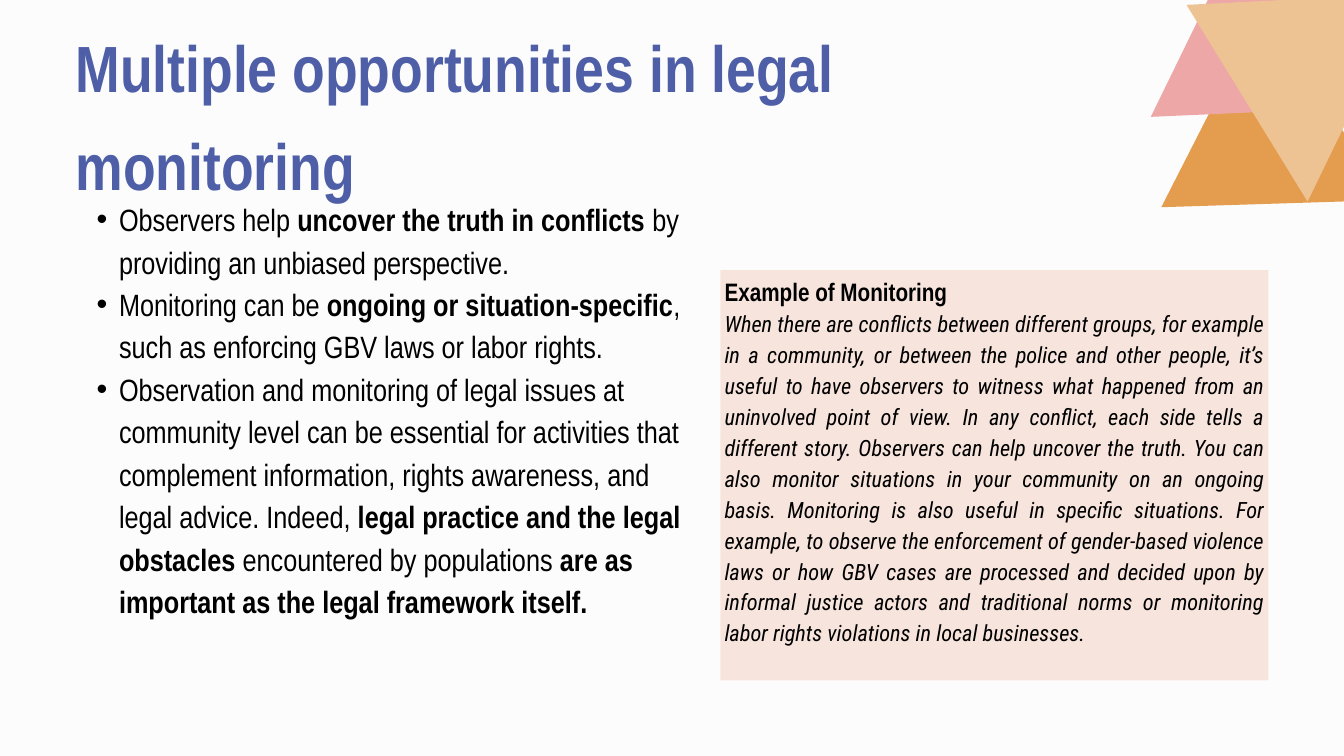
from dataclasses import dataclass

from lxml import etree
from pptx import Presentation
from pptx.dml.color import RGBColor
from pptx.enum.shapes import MSO_SHAPE
from pptx.enum.text import MSO_ANCHOR, MSO_AUTO_SIZE, PP_ALIGN
from pptx.oxml.ns import qn
from pptx.util import Pt

PX = 9525  # EMU per px
RECTANGLE = MSO_SHAPE.RECTANGLE
TOP = MSO_ANCHOR.TOP
NO_AUTOFIT = MSO_AUTO_SIZE.NONE
LEFT, JUSTIFY = PP_ALIGN.LEFT, PP_ALIGN.JUSTIFY


@dataclass(frozen=True)
class Theme:
    page: str = "FCFCFC"
    title: str = "4E5FA7"
    text: str = "000000"
    panel: str = "F7E5DD"
    orange: str = "E49C4E"
    pink: str = "EDA7A7"
    sand: str = "EEC394"
    main_font: str = "Arial Narrow"
    story_font: str = "Roboto Condensed"
    title_size: int = 70
    list_size: int = 33
    heading_size: int = 27
    story_size: int = 24


THEME = Theme()

TITLE = "Multiple opportunities in legal monitoring"

# Each point is a list of (text, bold) spans.
POINTS = [
    [("Observers help ", False),
     ("uncover the truth in conflicts ", True),
     ("by providing an unbiased perspective.", False)],
    [("Monitoring can be ", False),
     ("ongoing or situation-specific", True),
     (", such as enforcing GBV laws or labor rights.", False)],
    [("Observation and monitoring of legal issues at community level can be "
      "essential for activities that complement information, rights "
      "awareness, and legal advice. Indeed, ", False),
     ("legal practice and the legal obstacles", True),
     (" encountered by populations ", False),
     ("are as important as the legal framework itself.", True)],
]

EXAMPLE_HEADING = "Example of Monitoring"
EXAMPLE_STORY = (
    "When there are conflicts between different groups, for example in a "
    "community, or between the police and other people, it’s useful to have "
    "observers to witness what happened from an uninvolved point of view. In "
    "any conflict, each side tells a different story. Observers can help "
    "uncover the truth. You can also monitor situations in your community on "
    "an ongoing basis. Monitoring is also useful in specific situations. For "
    "example, to observe the enforcement of gender-based violence laws or how "
    "GBV cases are processed and decided upon by informal justice actors and "
    "traditional norms or monitoring labor rights violations in local "
    "businesses."
)

TRIANGLES = [
    (THEME.orange, [(1809, 2), (1977, 286), (1659, 296)]),
    (THEME.pink, [(1789, -130), (1962, 153), (1644, 167)]),
    (THEME.sand, [(1868, 288), (1695, 7), (2012, -9)]),
]


def set_values(target, values):
    for name, value in values.items():
        setattr(target, name, value)


def place(shape, left, top, width, height):
    set_values(shape, {"left": left * PX, "top": top * PX,
                       "width": width * PX, "height": height * PX})


def prepare_frame(shape, side=0, top=0):
    """Give the shape a wrapping, top-anchored frame with insets in px."""
    frame = shape.text_frame
    set_values(frame, {
        "word_wrap": True, "auto_size": NO_AUTOFIT, "vertical_anchor": TOP,
        "margin_left": side * PX, "margin_right": side * PX,
        "margin_top": top * PX, "margin_bottom": side * PX,
    })
    return frame


def format_para(para, leading, alignment=LEFT, level=0):
    set_values(para, {"alignment": alignment, "level": level,
                      "line_spacing": Pt(leading),
                      "space_before": Pt(0), "space_after": Pt(0)})


def add_span(para, text, size, font=THEME.main_font, color=THEME.text,
             bold=False, italic=False):
    span = para.add_run()
    span.text = text
    set_values(span.font, {"name": font, "size": Pt(size),
                           "bold": bold, "italic": italic})
    span.font.color.rgb = RGBColor.from_string(color)


def add_bullet(para, indent, hanging):
    properties = para._p.get_or_add_pPr()
    properties.set("marL", str(indent * PX))
    properties.set("indent", str(-hanging * PX))
    etree.SubElement(properties, qn("a:buFont"), typeface="Arial")
    etree.SubElement(properties, qn("a:buChar"), char="•")


def paint(shape, color):
    shape.shadow.inherit = False
    shape.fill.solid()
    shape.fill.fore_color.rgb = RGBColor.from_string(color)
    shape.line.fill.background()


def fill_title(page):
    title = page.shapes.title
    place(title, 108, 11, 1402, 285)
    para = prepare_frame(title).paragraphs[0]
    format_para(para, 105)
    add_span(para, TITLE, THEME.title_size, color=THEME.title, bold=True)


def fill_points(page):
    body = page.placeholders[1]
    place(body, 108, 279, 900, 726)
    frame = prepare_frame(body)
    for number, point in enumerate(POINTS):
        para = frame.add_paragraph() if number else frame.paragraphs[0]
        format_para(para, 45.5, level=1)
        add_bullet(para, indent=62, hanging=32)
        for text, bold in point:
            add_span(para, text, THEME.list_size, bold=bold)


def add_example(page):
    panel = page.shapes.add_shape(RECTANGLE, 0, 0, 0, 0)
    place(panel, 1029, 386, 783, 586)
    paint(panel, THEME.panel)
    frame = prepare_frame(panel, side=6, top=2)
    heading, story = frame.paragraphs[0], frame.add_paragraph()
    format_para(heading, 37.3, JUSTIFY)
    add_span(heading, EXAMPLE_HEADING, THEME.heading_size, bold=True)
    format_para(story, 33.1, JUSTIFY)
    add_span(story, EXAMPLE_STORY, THEME.story_size,
             font=THEME.story_font, italic=True)


def add_triangle(page, color, corners):
    start, *others = corners
    builder = page.shapes.build_freeform(*start, scale=PX)
    builder.add_line_segments(others, close=True)
    paint(builder.convert_to_shape(), color)


def main():
    deck = Presentation()
    set_values(deck, {"slide_width": 1920 * PX, "slide_height": 1080 * PX})
    page = deck.slides.add_slide(deck.slide_layouts[1])
    page.background.fill.solid()
    page.background.fill.fore_color.rgb = RGBColor.from_string(THEME.page)
    fill_title(page)
    fill_points(page)
    add_example(page)
    for color, corners in TRIANGLES:
        add_triangle(page, color, corners)
    deck.save("out.pptx")


if __name__ == "__main__":
    main()
